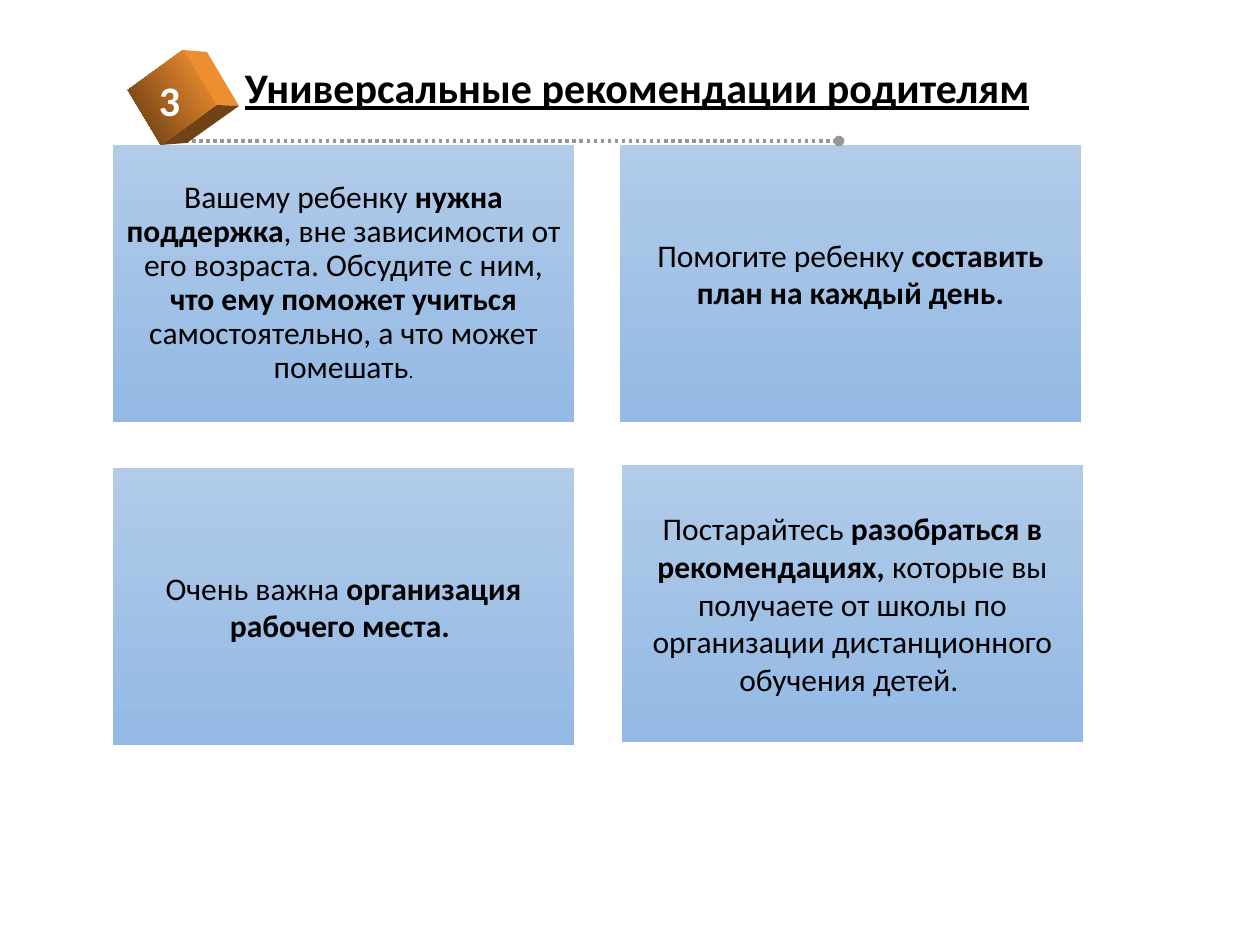
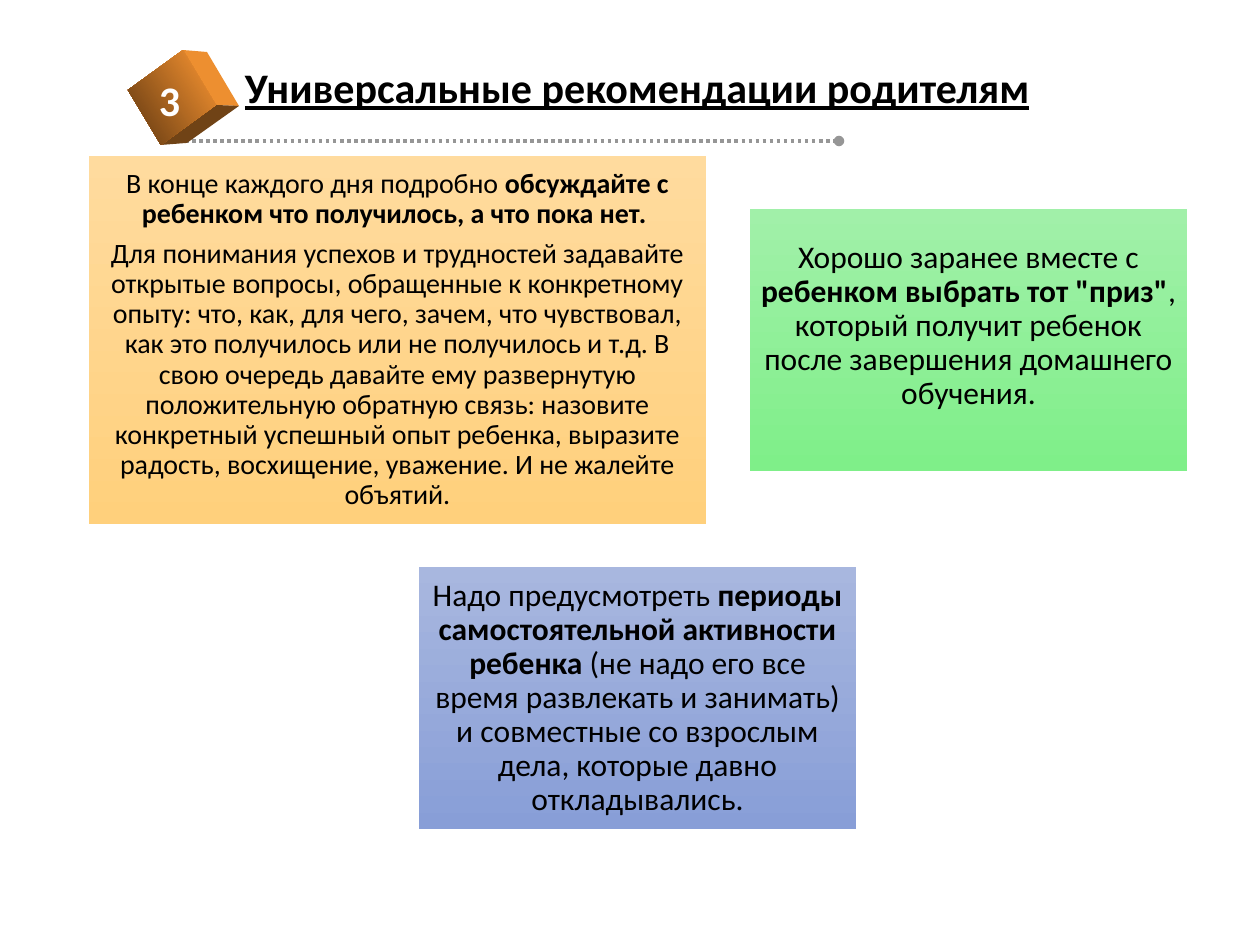
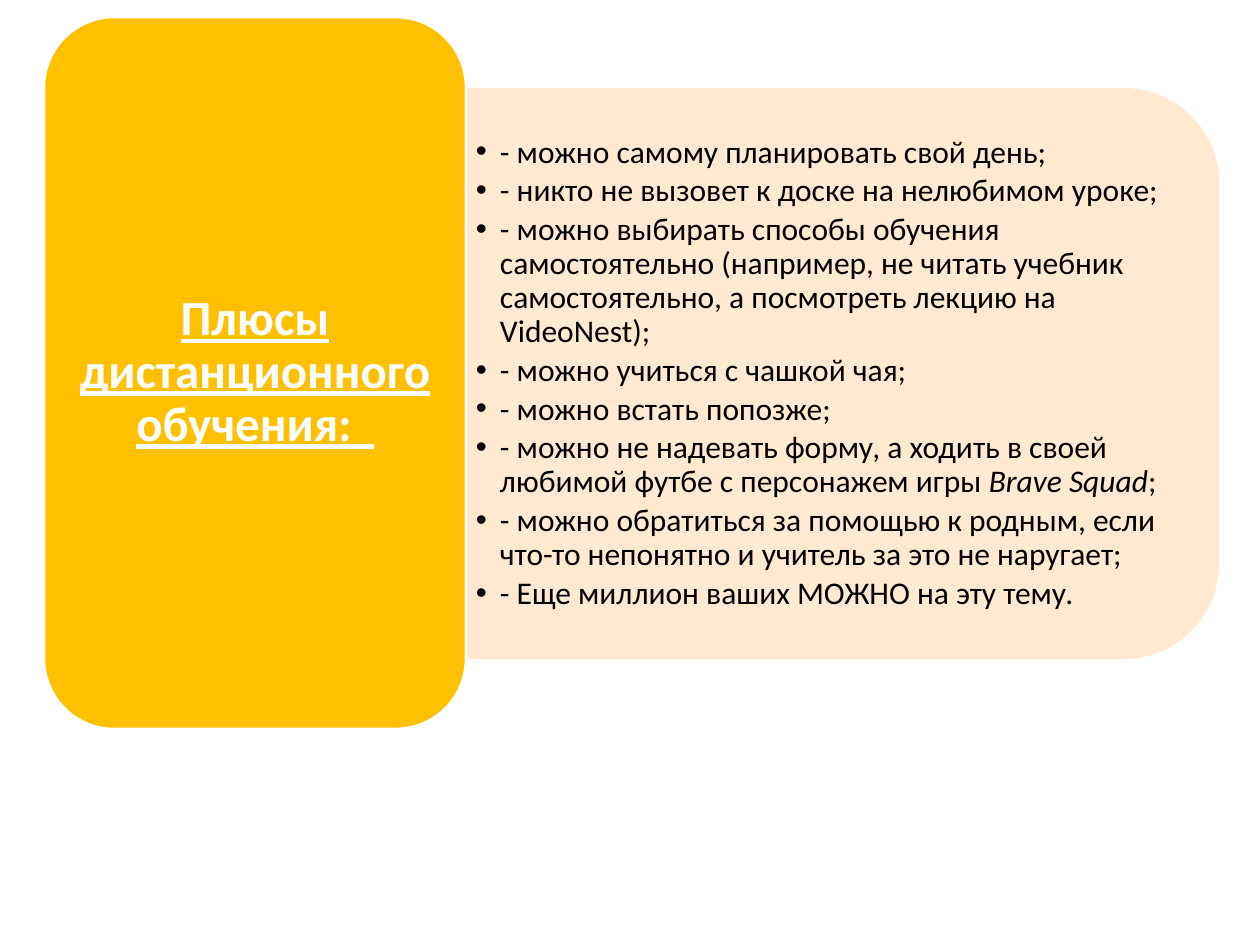
from lxml.etree import SubElement
from pptx import Presentation
from pptx.dml.color import RGBColor
from pptx.enum.dml import MSO_LINE
from pptx.enum.shapes import MSO_CONNECTOR, MSO_SHAPE
from pptx.enum.text import MSO_ANCHOR, MSO_AUTO_SIZE, PP_ALIGN
from pptx.oxml.ns import qn
from pptx.util import Emu, Pt

FONT = "Calibri"
BLACK, WHITE, GREY = "000000", "FFFFFF", "969696"
BLUE = ("B1CBE9", "93B9E4")
APRICOT = ("FFDB9E", "FFD07C")
GREEN = ("A1F0A9", "7FEF89")
INDIGO = ("A8B7DF", "889ED7")
CUBE = ("FF9933", "5E3610")
CUBE_SIDE, CUBE_BASE = "ED8F30", "704316"
AMBER, CREAM = "FFC000", "FFE8CC"
BOLD = {"bold": True}


def px(n):
    """Turn pixels at 126 to the inch into EMU."""
    return Emu(round(n * 914400 / 126))


def rgb(color):
    """Turn a hex string into a colour."""
    return RGBColor.from_string(color)


def add_gradient(fill, colors, angle=270):
    """Fill with two gradient stops, top to bottom unless an angle is given."""
    fill.gradient()
    fill.gradient_angle = angle
    for stop, color in zip(fill.gradient_stops, colors):
        stop.color.rgb = rgb(color)


def set_fill(sp, fill, angle=270):
    """Give a shape a plain or gradient fill, no line and no shadow."""
    sp.shadow.inherit = False
    sp.line.fill.background()
    if isinstance(fill, tuple):
        add_gradient(sp.fill, fill, angle)
    else:
        sp.fill.solid()
        sp.fill.fore_color.rgb = rgb(fill)
    return sp


def add_shape(s, kind, box, fill):
    """Add a preset shape in a pixel box."""
    return set_fill(s.shapes.add_shape(kind, *map(px, box)), fill)


def add_bullet(p, indent):
    """Give a paragraph a round bullet with a hanging indent."""
    pPr = p._p.get_or_add_pPr()
    pPr.set("marL", str(px(indent)))
    pPr.set("indent", str(-px(indent)))
    SubElement(pPr, qn("a:buFont"), typeface="Arial")
    SubElement(pPr, qn("a:buChar"), char="•")


def add_run(p, text, size, color=BLACK, bold=False, italic=False, underline=False):
    """Add one formatted run."""
    r = p.add_run()
    r.text = text
    f = r.font
    f.name, f.size, f.color.rgb = FONT, Pt(size), rgb(color)
    f.bold, f.italic, f.underline = bold, italic, underline


def set_text(sp, paragraphs, size=18, align=PP_ALIGN.CENTER, insets=(9, 9, 9, 9), spacing=0.9,
             after=0.35, anchor=MSO_ANCHOR.MIDDLE, wrap=True, bullet=0, **fmt):
    """Write paragraphs of plain strings and (string, format) pairs."""
    tf = sp.text_frame
    tf.word_wrap, tf.vertical_anchor = wrap, anchor
    if not wrap:
        tf.auto_size = MSO_AUTO_SIZE.SHAPE_TO_FIT_TEXT
    tf.margin_left, tf.margin_top, tf.margin_right, tf.margin_bottom = map(px, insets)
    for i, parts in enumerate(paragraphs):
        p = tf.add_paragraph() if i else tf.paragraphs[0]
        p.alignment, p.line_spacing, p.space_after = align, spacing, Pt(size * after)
        if bullet:
            add_bullet(p, bullet)
        for part in parts:
            text, extra = part if isinstance(part, tuple) else (part, {})
            add_run(p, text, **{"size": size, **fmt, **extra})


def add_label(s, box, text, **fmt):
    """Add a bold heading on one line that does not wrap."""
    sp = s.shapes.add_textbox(*map(px, box))
    set_text(sp, [[text]], size=24, align=PP_ALIGN.LEFT, insets=(13, 6, 13, 6), spacing=1,
             after=0, anchor=MSO_ANCHOR.TOP, wrap=False, bold=True, **fmt)


def add_face(s, x, y, points, fill):
    """Add one face of the cube as an outline relative to x, y."""
    points = [(px(x + dx), px(y + dy)) for dx, dy in points]
    fb = s.shapes.build_freeform(*points[0], scale=1.0)
    fb.add_line_segments(points[1:], close=True)
    set_fill(fb.convert_to_shape(), fill, angle=213)


def add_header(s, x, y, number, title):
    """Draw the numbered cube, the title and the dotted rule."""
    line = s.shapes.add_connector(MSO_CONNECTOR.STRAIGHT, *map(px, (x + 50, y + 91, x + 711, y + 91)))
    line.line.color.rgb = rgb(GREY)
    line.line.width, line.line.dash_style = Pt(2), MSO_LINE.ROUND_DOT
    SubElement(line.line._get_or_add_ln(), qn("a:tailEnd"), type="oval")
    SubElement(line._element.spPr, qn("a:effectLst"))
    left, top, right, bottom = (0, 40), (55, 0), (88, 55), (33, 95)
    corner = (111, 56)
    add_face(s, x, y, [top, (79, 2), corner, right], CUBE_SIDE)
    add_face(s, x, y, [bottom, right, corner, (59, 93)], CUBE_BASE)
    add_face(s, x, y, [left, top, right, bottom], CUBE)
    add_label(s, (x + 104, y + 6, 818, 64), title, underline=True)
    add_label(s, (x + 18, y + 19, 49, 63), number, color=WHITE)


def add_card(s, box, colors, paragraphs, lift=0, **fmt):
    """Draw a gradient card whose text sits higher when lift is given."""
    sp = add_shape(s, MSO_SHAPE.RECTANGLE, box, colors)
    set_text(sp, paragraphs, insets=(9, 9, 9, 9 + lift), **fmt)


def add_panel(s, x, y, w, h, items):
    """Draw the bulleted panel with its two right corners rounded."""
    turned = (x + (w - h) / 2, y + (h - w) / 2, h, w)
    sp = add_shape(s, MSO_SHAPE.ROUND_2_SAME_RECTANGLE, turned, CREAM)
    sp.rotation = 90
    SubElement(sp.fill._xPr.find(qn("a:solidFill"))[0], qn("a:alpha"), val="90000")
    tb = s.shapes.add_textbox(*map(px, (x + 1, y + 28, w - 29, h - 56)))
    set_text(tb, items, align=PP_ALIGN.LEFT, insets=(9, 5, 9, 5), after=0.15, bullet=24)


def add_caption(s, box, text):
    """Draw the rounded amber caption."""
    sp = add_shape(s, MSO_SHAPE.ROUNDED_RECTANGLE, box, AMBER)
    sp.line.color.rgb, sp.line.width = rgb(WHITE), Pt(1.5)
    set_text(sp, [[text]], size=28, insets=(15, 8, 15, 8), color=WHITE, bold=True, underline=True)


def build_support(s):
    """Four pieces of advice in a grid."""
    w, h = 461, 277
    add_card(s, (113, 145, w, h), BLUE, [[
        "Вашему ребенку ", ("нужна поддержка", BOLD),
        ", вне зависимости от его возраста. Обсудите с ним, ", ("что ему поможет учиться", BOLD),
        " самостоятельно, а что может помешать", (".", {"size": 11})]])
    add_card(s, (620, 145, w, h), BLUE, [[
        "Помогите ребенку ", ("составить план на каждый день.", BOLD)]], lift=20, spacing=1)
    add_card(s, (113, 468, w, h), BLUE, [[
        "Очень важна ", ("организация рабочего места. ", BOLD)]], spacing=1)
    add_card(s, (622, 465, w, h), BLUE, [[
        "Постарайтесь ", ("разобраться в рекомендациях,", BOLD),
        " которые вы получаете от школы по организации дистанционного обучения детей. "]], spacing=1)


def build_feedback(s):
    """Three cards on talking, prizes and free time."""
    add_card(s, (89, 156, 617, 368), APRICOT, [
        ["В конце каждого дня подробно ",
         ("обсуждайте с ребенком что получилось, а что пока нет. ", BOLD)],
        ["Для понимания успехов и трудностей задавайте открытые вопросы, обращенные к "
         "конкретному опыту: что, как, для чего, зачем, что чувствовал, как это получилось "
         "или не получилось и т.д. В свою очередь давайте ему развернутую положительную "
         "обратную связь: назовите конкретный успешный опыт ребенка, выразите радость, "
         "восхищение, уважение. И не жалейте объятий."]], size=16)
    w, h = 437, 262
    add_card(s, (750, 209, w, h), GREEN, [[
        "Хорошо заранее вместе с ", ("ребенком выбрать тот \"приз\"", BOLD),
        ", который получит ребенок после завершения домашнего обучения."]], lift=28)
    add_card(s, (419, 567, w, h), INDIGO, [[
        "Надо предусмотреть ", ("периоды самостоятельной активности ребенка", BOLD),
        " (не надо его все время развлекать и занимать) и совместные со взрослым дела, "
        "которые давно откладывались."]])


def build_pluses(s):
    """The caption and the list of advantages."""
    add_panel(s, 466, 88, 753, 571, [
        ["- можно самому планировать свой день;"],
        ["- никто не вызовет к доске на нелюбимом уроке;"],
        ["- можно выбирать способы обучения самостоятельно (например, не читать учебник "
         "самостоятельно, а посмотреть лекцию на VideoNest);"],
        ["- можно учиться с чашкой чая;"],
        ["- можно встать попозже;"],
        ["- можно не надевать форму, а ходить в своей любимой футбе с персонажем игры ",
         ("Brave Squad", {"italic": True}), ";"],
        ["- можно обратиться за помощью к родным, если что-то непонятно и учитель за это "
         "не наругает;"],
        ["- Еще миллион ваших МОЖНО на эту тему."]])
    add_caption(s, (44, 17, 422, 712), "Плюсы дистанционного обучения:  ")


def main():
    """Build the three slides and save them."""
    prs = Presentation()
    prs.slide_width, prs.slide_height = px(1260), px(945)
    for build, has_header in ((build_support, True), (build_feedback, True), (build_pluses, False)):
        s = prs.slides.add_slide(prs.slide_layouts[6])
        build(s)
        if has_header:
            add_header(s, 128, 50, "3", "Универсальные рекомендации родителям")
    prs.save("out.pptx")


if __name__ == "__main__":
    main()
